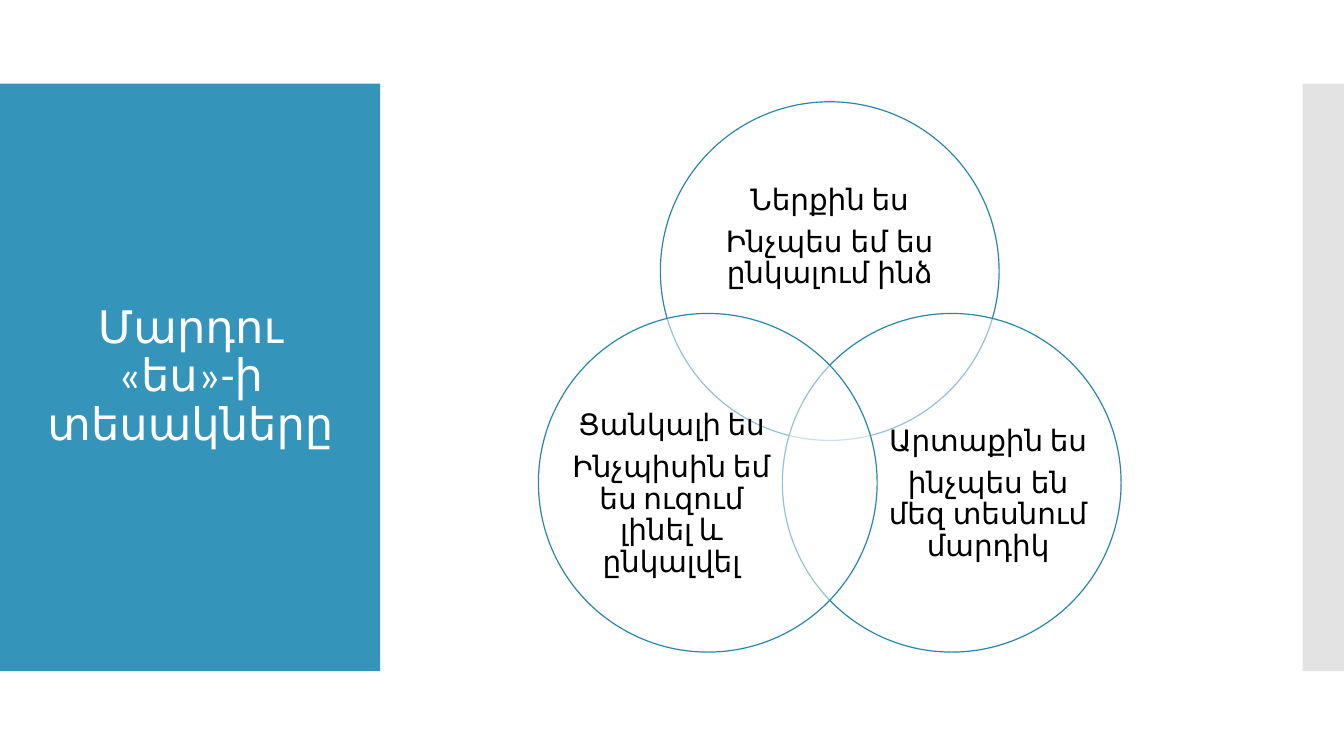
"""Build a slide with a title panel and three overlapping circles on kinds of self."""
from lxml import etree
from pptx import Presentation
from pptx.dml.color import RGBColor
from pptx.enum.shapes import MSO_SHAPE
from pptx.enum.text import MSO_ANCHOR, PP_ALIGN
from pptx.oxml.ns import qn
from pptx.util import Inches, Pt


def add_filled(kind, box, color, opacity=100):
    shape = slide.shapes.add_shape(kind, *map(Inches, box))
    shape.shadow.inherit = False
    shape.fill.solid()
    shape.fill.fore_color.rgb = RGBColor.from_string(color)
    shape.line.fill.background()
    if opacity < 100:
        fill_color = shape.fill._xPr.find(qn("a:solidFill"))[0]
        etree.SubElement(fill_color, qn("a:alpha"), val=str(opacity * 1000))
    return shape


def add_text(box, lines, size, color, margins=(0, 0)):
    frame = slide.shapes.add_textbox(*map(Inches, box)).text_frame
    frame.word_wrap = True
    frame.vertical_anchor = MSO_ANCHOR.MIDDLE
    frame.margin_left = frame.margin_right = Inches(margins[0])
    frame.margin_top = frame.margin_bottom = Inches(margins[1])
    for index, (text, font_name) in enumerate(lines):
        paragraph = frame.add_paragraph() if index else frame.paragraphs[0]
        paragraph.text = text
        paragraph.alignment = PP_ALIGN.CENTER
        paragraph.line_spacing = 0.9
        paragraph.space_before = Pt(7.3 if index else 0)
        paragraph.font.name = font_name
        paragraph.font.size = Pt(size)
        paragraph.font.color.rgb = RGBColor.from_string(color)


presentation = Presentation()
presentation.slide_width = Inches(13.33)
presentation.slide_height = Inches(7.5)
slide = presentation.slides.add_slide(presentation.slide_layouts[6])

add_filled(MSO_SHAPE.RECTANGLE, (0, 0.83, 3.77, 5.83), "3494BA")
add_filled(MSO_SHAPE.RECTANGLE, (12.92, 0.83, 0.41, 5.83), "C8C8C8", 50)
add_text((0.28, 1.23, 3.22, 5.03), [("Մարդու «ես»-ի տեսակները", "Calibri")],
         32, "FFFFFF", (0.1, 0.05))

DIAMETER = 3.36
circles = [
    (6.55, 1.01, (7, 1.6, 2.46, 1.51),
     "Ներքին ես", "Ինչպես եմ ես ընկալում ինձ", "TeX Gyre Schola"),
    (7.76, 3.11, (8.79, 3.98, 2.02, 1.85),
     "Արտաքին ես", "ինչպես են մեզ տեսնում մարդիկ", "TeX Gyre Schola"),
    (5.34, 3.11, (5.65, 3.98, 2.02, 1.85),
     "Ցանկալի ես", "Ինչպիսին եմ ես ուզում լինել և ընկալվել", "Calibri"),
]
for left, top, text_box, heading, question, question_font in circles:
    circle = add_filled(MSO_SHAPE.OVAL, (left, top, DIAMETER, DIAMETER), "FFFFFF", 50)
    circle.line.color.rgb = RGBColor.from_string("2B85A8")
    circle.line.width = Pt(0.85)
    add_text(text_box, [(heading, "Calibri"), (question, question_font)], 21, "000000")

presentation.save("out.pptx")
